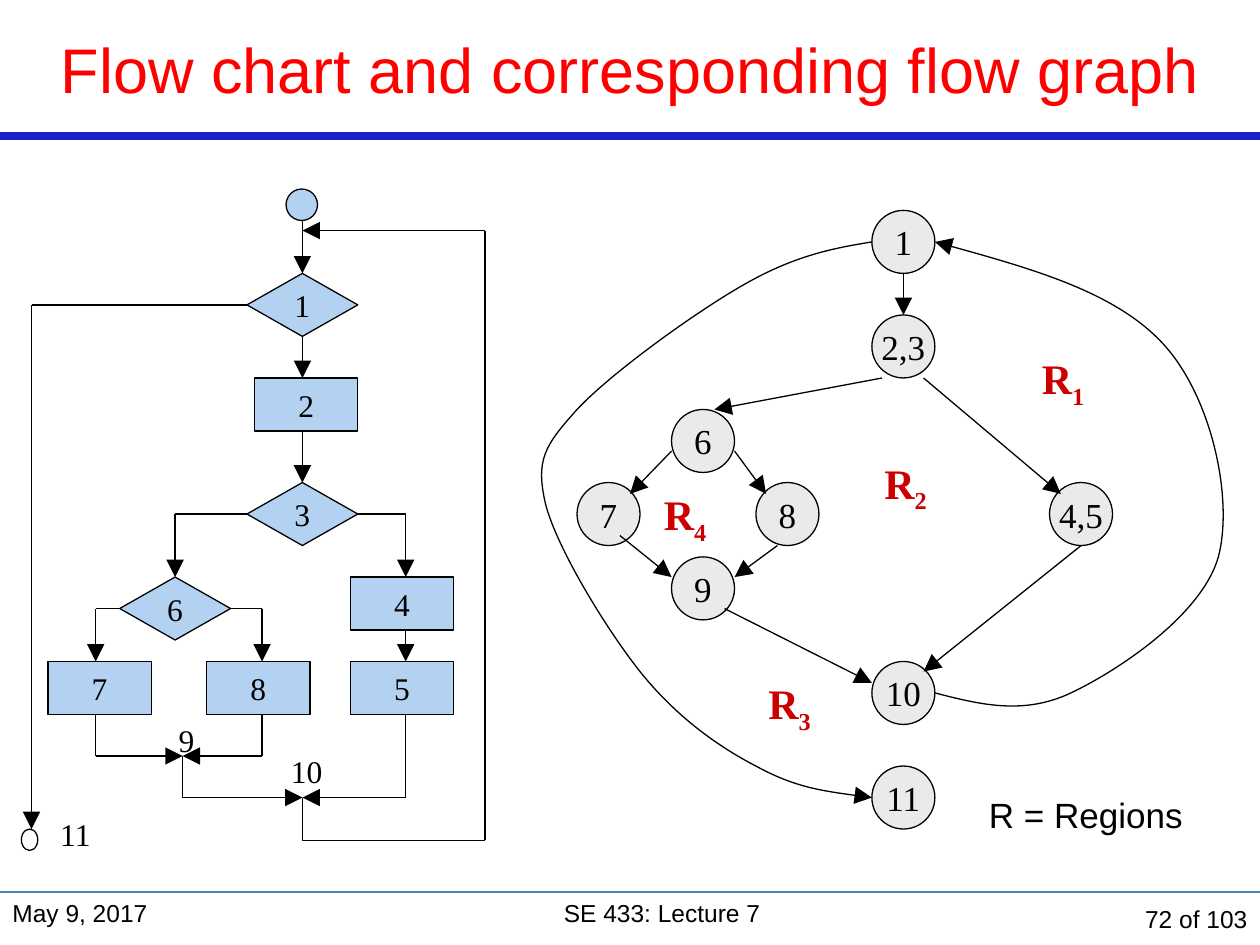
from dataclasses import dataclass
from itertools import pairwise
from typing import Any

from lxml.etree import SubElement
from pptx import Presentation
from pptx.dml.color import RGBColor
from pptx.enum.shapes import MSO_CONNECTOR, MSO_SHAPE
from pptx.enum.text import MSO_ANCHOR, PP_ALIGN
from pptx.oxml.ns import qn
from pptx.util import Inches, Pt

COLORS = {
    "ink": "000000", "title": "FF0000", "rule": "1822CD", "footer": "4F81BD",
    "step": "B3D1F0", "node": "EAEAEA", "region": "CC0000",
}


@dataclass
class FlowSlide:
    slide: Any
    shapes: Any
    sans: str = "Arial"
    serif: str = "Times New Roman"
    thin: float = 0.75

    def color(self, name):
        return RGBColor.from_string(COLORS[name])

    def start_group(self):
        self.shapes = self.slide.shapes.add_group_shape().shapes

    def end_group(self):
        self.shapes = self.slide.shapes

    def style_text(self, paragraph, size, font, color="ink", align=PP_ALIGN.LEFT, bold=False):
        paragraph.alignment = align
        paragraph.font.size = Pt(size)
        paragraph.font.name = font
        paragraph.font.bold = bold
        paragraph.font.color.rgb = self.color(color)

    def style_line(self, shape, color="ink", width=None, arrow=False):
        shape.line.color.rgb = self.color(color)
        shape.line.width = Pt(width or self.thin)
        if arrow:
            outline = shape._element.spPr.find(qn("a:ln"))
            SubElement(outline, qn("a:tailEnd"), type="triangle", w="lg", len="lg")

    def title(self, text):
        title = self.slide.shapes.title
        title.left, title.top, title.width, title.height = 0, 0, Inches(10), Inches(1.08)
        title.text_frame.text = text
        title.text_frame.vertical_anchor = MSO_ANCHOR.MIDDLE
        self.style_text(title.text_frame.paragraphs[0], 36, self.sans, "title", PP_ALIGN.CENTER)

    def line(self, start, end, color="ink", width=None, arrow=False):
        connector = self.shapes.add_connector(
            MSO_CONNECTOR.STRAIGHT, *(Inches(value) for value in (*start, *end)))
        self.style_line(connector, color, width, arrow)
        SubElement(connector._element.spPr, qn("a:effectLst"))

    def route(self, *points, arrow=True):
        legs = list(pairwise(points))
        for index, (start, end) in enumerate(legs, 1):
            self.line(start, end, arrow=arrow and index == len(legs))

    def curve(self, *points):
        start, *rest = [(Inches(x), Inches(y)) for x, y in points]
        builder = self.shapes.build_freeform(*start)
        builder.add_line_segments(rest, close=False)
        shape = builder.convert_to_shape()
        shape.shadow.inherit = False
        shape.fill.background()
        self.style_line(shape, arrow=True)
        segments = shape._element.xpath(".//a:lnTo")
        for index in range(0, len(segments), 3):
            curve = segments[index].getparent()
            bezier = curve.makeelement(qn("a:cubicBezTo"))
            segments[index].addprevious(bezier)
            for segment in segments[index:index + 3]:
                bezier.append(segment[0])
                curve.remove(segment)

    def block(self, kind, left, top, width, height, text="", fill=None, size=18):
        shape = self.shapes.add_shape(
            kind, Inches(left), Inches(top), Inches(width), Inches(height))
        shape.shadow.inherit = False
        if fill:
            shape.fill.solid()
            shape.fill.fore_color.rgb = self.color(fill)
        else:
            shape.fill.background()
        self.style_line(shape)
        if text:
            frame = shape.text_frame
            frame.text = text
            frame.word_wrap = False
            frame.vertical_anchor = MSO_ANCHOR.MIDDLE
            self.style_text(frame.paragraphs[0], size, self.serif, align=PP_ALIGN.CENTER)

    def decision(self, text, left, top):
        self.block(MSO_SHAPE.DIAMOND, left, top, 0.88, 0.5, text, "step")

    def step(self, text, left, top):
        self.block(MSO_SHAPE.RECTANGLE, left, top, 0.82, 0.42, text, "step")

    def node(self, text, left, top):
        self.block(MSO_SHAPE.OVAL, left, top, 0.5, 0.5, text, "node", 20)

    def text(self, text, left, top, width, height, size=18, font=None, color="ink",
             align=PP_ALIGN.LEFT, anchor=MSO_ANCHOR.TOP, bold=False, wrap=True):
        box = self.shapes.add_textbox(Inches(left), Inches(top), Inches(width), Inches(height))
        frame = box.text_frame
        frame.word_wrap = wrap
        frame.vertical_anchor = anchor
        frame.text = text
        self.style_text(frame.paragraphs[0], size, font or self.serif, color, align, bold)
        return frame.paragraphs[0]

    def region(self, number, left, top):
        paragraph = self.text("R", left, top, 0.83, 0.5, 24, color="region", bold=True)
        subscript = paragraph.add_run()
        subscript.text = number
        subscript.font._element.set("baseline", "-25000")


def draw_flow_chart(page):
    page.block(MSO_SHAPE.OVAL, 0.17, 6.58, 0.13, 0.17)
    page.start_group()
    page.block(MSO_SHAPE.OVAL, 2.27, 1.5, 0.25, 0.25, fill="step")
    for decision in (("1", 1.96, 2.17), ("3", 1.96, 3.83), ("6", 0.95, 4.58)):
        page.decision(*decision)
    for step in (("2", 2.02, 3), ("4", 2.78, 4.58), ("5", 2.78, 5.25),
                 ("7", 0.38, 5.25), ("8", 1.64, 5.25)):
        page.step(*step)
    main, far_left, left, middle, right, loop = 2.4, 0.25, 0.76, 2.08, 3.22, 3.85
    join_9, join_10 = (1.45, 6), (main, 6.33)
    for x in (left, middle):
        page.route((x, 5.67), (x, 6), join_9)
    page.route(join_9, (1.45, 6.33), join_10)
    page.route((right, 5.67), (right, 6.33), join_10)
    for top, bottom in ((1.75, 2.17), (2.67, 3), (3.42, 3.83)):
        page.route((main, top), (main, bottom))
    page.route((1.96, 4.08), (1.39, 4.08), (1.39, 4.58))
    page.route((2.84, 4.08), (right, 4.08), (right, 4.58))
    page.route((right, 5), (right, 5.25))
    page.route((0.95, 4.83), (left, 4.83), (left, 5.25))
    page.route((1.83, 4.83), (middle, 4.83), (middle, 5.25))
    page.route(join_10, (main, 6.67), (loop, 6.67), (loop, 1.83), (main, 1.83))
    page.route((1.96, 2.42), (far_left, 2.42), (far_left, 6.58))
    page.text("9", 1.32, 5.67, 0.25, 0.4)
    page.text("10", 2.21, 5.92, 0.64, 0.4)
    page.text("11", 0.38, 6.42, 0.64, 0.4)
    page.end_group()


def draw_flow_graph(page):
    page.start_group()
    page.curve((6.92, 1.92), (6.61, 1.97), (6.31, 2.03), (5.92, 2.25),
               (5.53, 2.47), (4.85, 2.96), (4.58, 3.25), (4.32, 3.54), (4.25, 3.65),
               (4.33, 4), (4.42, 4.35), (4.81, 4.99), (5.08, 5.33), (5.36, 5.68),
               (5.69, 5.92), (6, 6.08), (6.31, 6.25), (6.61, 6.29), (6.92, 6.33))
    for node in (("1", 6.92, 1.67), ("2,3", 6.92, 2.5), ("10", 6.92, 5.25),
                 ("11", 6.92, 6.08), ("6", 5.33, 3.25), ("9", 5.33, 4.42),
                 ("7", 4.58, 3.83), ("8", 6, 3.83), ("4,5", 8.33, 3.83)):
        page.node(*node)
    for start, end in (((7.17, 2.17), (7.17, 2.5)), ((7.33, 3), (8.42, 3.92)),
                       ((7, 3), (5.67, 3.25)), ((5.33, 3.58), (5, 3.92)),
                       ((5.83, 3.58), (6.08, 3.92)), ((4.92, 4.25), (5.33, 4.58)),
                       ((6.17, 4.33), (5.83, 4.58)), ((5.75, 4.83), (6.92, 5.42)),
                       ((8.58, 4.33), (7.33, 5.33))):
        page.route(start, end)
    page.curve((7.42, 5.5), (7.77, 5.59), (8.12, 5.68), (8.5, 5.5),
               (8.88, 5.32), (9.54, 4.88), (9.67, 4.42), (9.79, 3.96), (9.62, 3.17),
               (9.25, 2.75), (8.88, 2.33), (8.15, 2.12), (7.42, 1.92))
    for region in (("1", 8.17, 2.75), ("2", 6.92, 3.58), ("3", 6, 5.33), ("4", 5.17, 3.83)):
        page.region(*region)
    page.end_group()
    page.text("R = Regions", 7.75, 6.25, 1.75, 0.44, 20, page.sans, wrap=False)


def main():
    presentation = Presentation()
    presentation.slide_width, presentation.slide_height = Inches(10), Inches(7.5)
    slide = presentation.slides.add_slide(presentation.slide_layouts[5])
    page = FlowSlide(slide, slide.shapes)
    page.line((0, 1.08), (10, 1.08), "rule", 4.5)
    page.line((0, 7.08), (10, 7.08), "footer")
    page.title("Flow chart and corresponding flow graph")
    draw_flow_chart(page)
    draw_flow_graph(page)
    page.text("May 9, 2017", 0, 7.08, 2.17, 0.42, 14, page.sans)
    page.text("SE 433: Lecture 7", 2.17, 7.08, 6.17, 0.42, 14, page.sans, align=PP_ALIGN.CENTER)
    page.text("72 of 103", 8.33, 7.08, 1.67, 0.42, 14, page.sans,
              align=PP_ALIGN.RIGHT, anchor=MSO_ANCHOR.MIDDLE)
    presentation.save("out.pptx")


if __name__ == "__main__":
    main()
